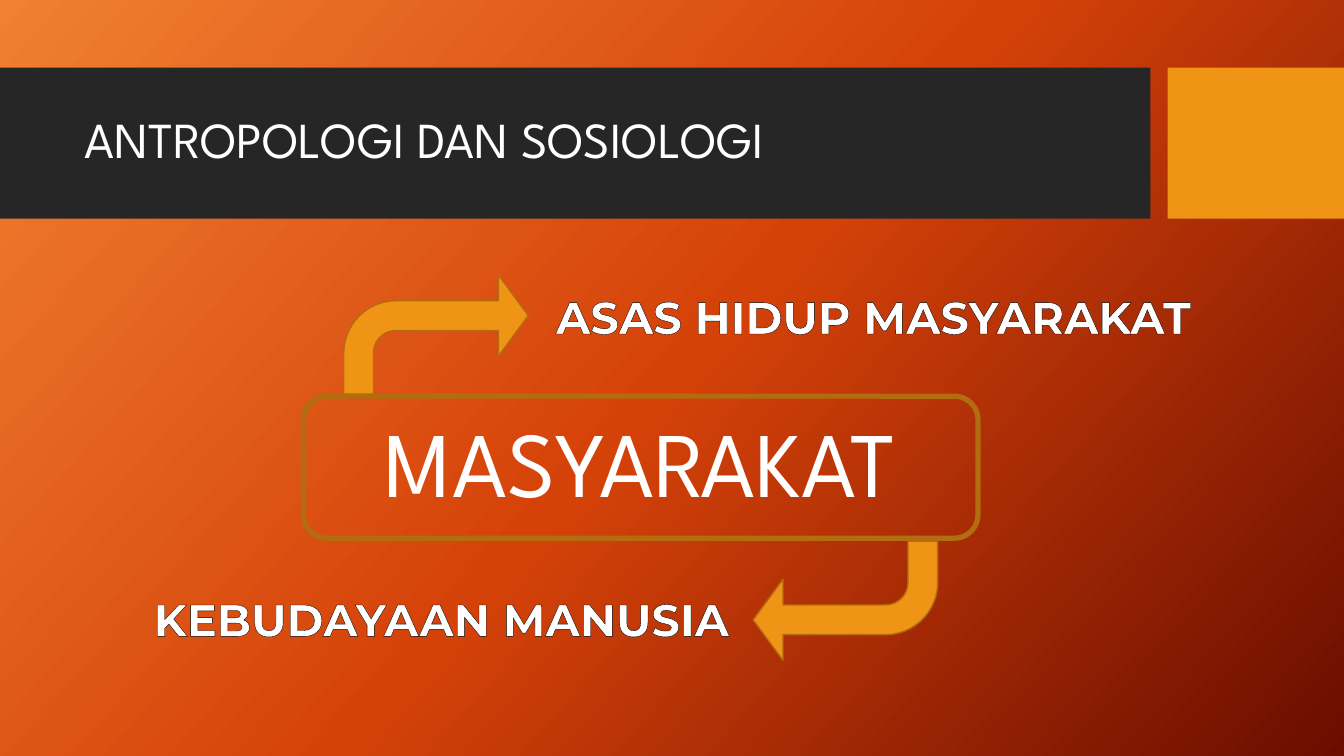
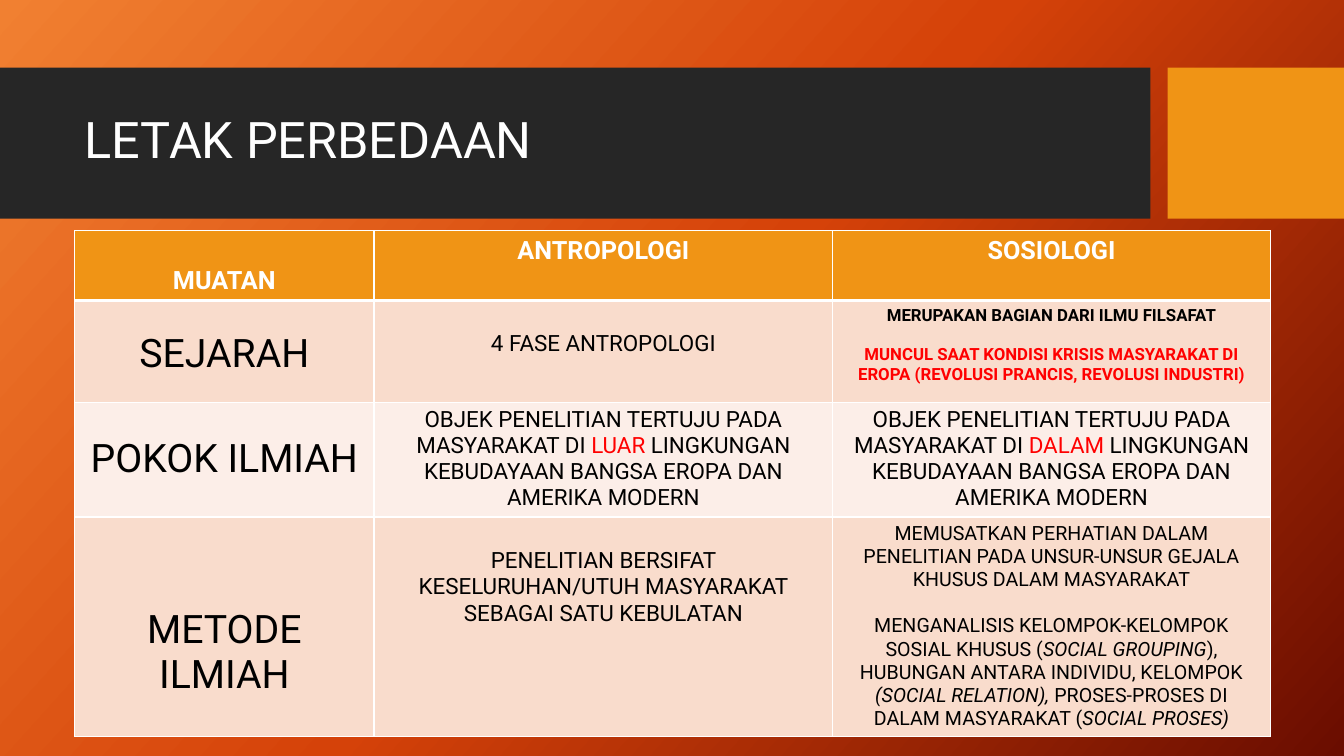
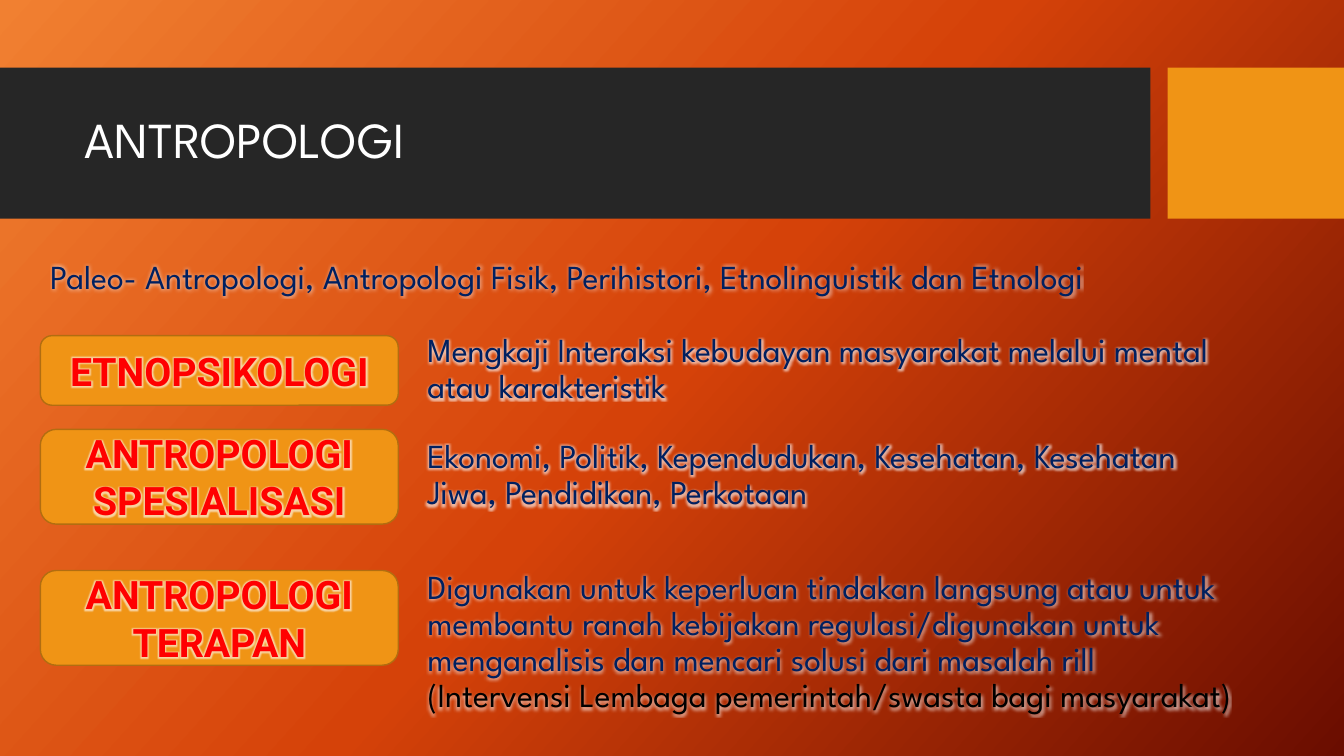
from copy import deepcopy

from lxml import etree
from pptx import Presentation
from pptx.dml.color import RGBColor
from pptx.enum.shapes import MSO_SHAPE
from pptx.enum.text import MSO_ANCHOR, PP_ALIGN
from pptx.oxml.ns import qn
from pptx.util import Inches, Pt

RECT, ROUND, BENT = MSO_SHAPE.RECTANGLE, MSO_SHAPE.ROUNDED_RECTANGLE, MSO_SHAPE.BENT_ARROW
TOP, MID, LOW = MSO_ANCHOR.TOP, MSO_ANCHOR.MIDDLE, MSO_ANCHOR.BOTTOM
LEFT, CENTER = PP_ALIGN.LEFT, PP_ALIGN.CENTER
WIDE, HIGH = 13.33, 7.5
TITLE_ONLY = 5
HUES = {
    "light": "F18031", "warm": "D54209", "deep": "6A0D00",
    "band": "262626", "gold": "F09415", "edge": "B26D10",
    "white": "FFFFFF", "black": "000000", "red": "FF0000", "navy": "002060",
    "odd": "F9DCCC", "even": "FCEEE8",
}
SPARTAN, ROBOTO, MONT = "League Spartan", "Roboto", "Montserrat"


def rgb(hue):
    return RGBColor.from_string(HUES[hue])


def inch(box):
    return [Inches(n) for n in box]


def solid(node, hue, alpha=100):
    """Adds a solid colour fill to an XML node."""
    fill = etree.SubElement(node, qn("a:solidFill"))
    etree.SubElement(fill, qn("a:srgbClr"), val=HUES[hue])
    return node


def halo(run, hue="white"):
    """Puts a soft glow around the letters of a run."""
    fx = etree.Element(qn("a:effectLst"))
    glow = etree.SubElement(fx, qn("a:glow"), rad=str(Pt(5)))
    tint = etree.SubElement(glow, qn("a:srgbClr"), val=HUES[hue])
    etree.SubElement(tint, qn("a:alpha"), val="60000")
    run._r.rPr.find(qn("a:latin")).addprevious(fx)


def write(frame, *paras, font=ROBOTO, size=16, hue="black", bold=False,
          align=CENTER, anchor=MID, lead=None, gap=0, glow=False, rim=False):
    """Each paragraph is a text or a list of texts and (text, changes) pairs."""
    frame.word_wrap = True
    frame.vertical_anchor = anchor
    for i, para in enumerate(paras):
        p = frame.paragraphs[0] if i == 0 else frame.add_paragraph()
        p.alignment = align
        if lead:
            p.line_spacing = lead
        if i:
            p.space_before = Pt(gap)
        for part in [para] if isinstance(para, str) else para:
            text, diff = (part, {}) if isinstance(part, str) else part
            run = p.add_run()
            run.text = text
            run.font.name, run.font.size = font, Pt(size)
            run.font.bold = bold
            run.font.italic = diff.get("italic", False)
            run.font.color.rgb = rgb(diff.get("hue", hue))
            if glow:
                halo(run)
            if rim:
                line = etree.Element(qn("a:ln"), w=str(Pt(0.75)))
                run._r.rPr.insert(0, solid(line, "black"))


def shape(slide, kind, box, fill=None, edge=None, width=1):
    item = slide.shapes.add_shape(kind, *inch(box))
    item.shadow.inherit = False
    if fill:
        item.fill.solid()
        item.fill.fore_color.rgb = rgb(fill)
    else:
        item.fill.background()
    if edge:
        item.line.color.rgb = rgb(edge)
        item.line.width = Pt(width)
    else:
        item.line.fill.background()
    return item


def label(slide, box, *paras, **look):
    write(slide.shapes.add_textbox(*inch(box)).text_frame, *paras, **look)


def backdrop(layout):
    """Gives the layout its diagonal three-colour gradient."""
    fill = layout.background.fill
    fill.gradient()
    fill.gradient_angle = 360 - 42
    stops = layout._element.find(".//" + qn("a:gsLst"))
    stops.insert(1, deepcopy(stops[0]))
    for stop, hue, place in zip(fill.gradient_stops, ("light", "warm", "deep"), (0, 0.5, 1)):
        stop.color.rgb = rgb(hue)
        stop.position = place


def bands(slide):
    """Draws the title bands and hands them to the layout of the slide."""
    tree = slide.slide_layout.shapes._spTree
    for i, (left, width, hue) in enumerate([(0, 11.41, "band"), (11.58, 1.75, "gold")]):
        band = shape(slide, RECT, (left, 0.67, width, 1.5), hue)
        tree.insert(2 + i, band._element)


def page(deck, title, font=SPARTAN):
    slide = deck.slides.add_slide(deck.slide_layouts[TITLE_ONLY])
    head = slide.shapes.title
    head.left, head.top, head.width, head.height = inch((0.74, 0.82, 10.51, 1.18))
    write(head.text_frame, title, font=font, size=36, hue="white", align=LEFT, lead=0.9)
    return slide


def society(slide, box):
    """A framed word with one bent arrow leaving above and one below."""
    left, top, width, height = box
    frame = shape(slide, ROUND, box, edge="edge", width=3.75)
    write(frame.text_frame, "MASYARAKAT", font=SPARTAN, size=66, hue="white", lead=0.9)
    long, tall, inset = 1.83, 1.18, 0.4
    spots = [(left + inset, top - tall - 0.02, 0),
             (left + width - inset - long, top + height + 0.03, 180)]
    for x, y, turn in spots:
        arrow = shape(slide, BENT, (x, y, long, tall), "gold", "edge")
        arrow.rotation = turn
        for i, share in enumerate((0.25, 0.34, 0.25, 0.44)):
            arrow.adjustments[i] = share
    look = {"font": MONT, "size": 32, "hue": "white", "bold": True, "anchor": TOP, "rim": True}
    label(slide, (left + 2.2, top - 1.11, 6.91, 0.64), "ASAS HIDUP MASYARAKAT", **look)
    label(slide, (left - 1.71, top + height + 0.48, 6.16, 0.64), "KEBUDAYAAN MANUSIA", **look)


def border(cell, tops, lows):
    sides = zip(("L", "R", "T", "B"), (1, 1, tops, lows))
    for i, (side, width) in enumerate(sides):
        line = etree.Element(qn("a:ln" + side), w=str(Pt(width)))
        cell._tc.get_or_add_tcPr().insert(i, solid(line, "white"))


def scope(word):
    return ["OBJEK PENELITIAN TERTUJU PADA MASYARAKAT DI ", (word, {"hue": "red"}),
            " LINGKUNGAN KEBUDAYAAN BANGSA EROPA DAN AMERIKA MODERN"]


def contrast(slide, box):
    """The table; each cell holds paragraphs, format and top margin."""
    head = {"size": 18, "hue": "white", "bold": True, "anchor": TOP}
    name, body = {"size": 28}, {"anchor": TOP}
    slant = {"italic": True}
    rows = [
        [(["MUATAN"], {**head, "anchor": LOW}, 0.05),
         (["ANTROPOLOGI"], head, 0.05),
         (["SOSIOLOGI"], head, 0.05)],
        [(["SEJARAH"], name, 0.1),
         (["4 FASE ANTROPOLOGI"], body, 0.3),
         (["MERUPAKAN BAGIAN DARI ILMU FILSAFAT",
           [("MUNCUL SAAT KONDISI KRISIS MASYARAKAT DI EROPA "
             "(REVOLUSI PRANCIS, REVOLUSI INDUSTRI)", {"hue": "red"})]],
          {"size": 12, "bold": True, "anchor": TOP, "gap": 14}, 0.05)],
        [(["POKOK ILMIAH"], name, 0.05),
         ([scope("LUAR")], body, 0.05),
         ([scope("DALAM")], body, 0.05)],
        [(["METODE ILMIAH"], {**name, "anchor": TOP}, 0.89),
         (["PENELITIAN BERSIFAT KESELURUHAN/UTUH MASYARAKAT SEBAGAI SATU KEBULATAN"],
          body, 0.31),
         (["MEMUSATKAN PERHATIAN DALAM PENELITIAN PADA UNSUR-UNSUR GEJALA "
           "KHUSUS DALAM MASYARAKAT",
           ["MENGANALISIS KELOMPOK-KELOMPOK SOSIAL KHUSUS (", ("SOCIAL GROUPING", slant),
            "), HUBUNGAN ANTARA INDIVIDU, KELOMPOK ", ("(SOCIAL RELATION),", slant),
            " PROSES-PROSES DI DALAM MASYARAKAT (", ("SOCIAL PROSES)", slant)]],
          {"size": 14, "anchor": TOP, "gap": 16.4}, 0.05)],
    ]
    grid = slide.shapes.add_table(len(rows), 3, *inch(box)).table
    grid.horz_banding = False
    for col, width in zip(grid.columns, (2.97, 4.55, 4.34)):
        col.width = Inches(width)
    for row, height in zip(grid.rows, (0.69, 1.01, 1.14, 2.18)):
        row.height = Inches(height)
    for r, row in enumerate(rows):
        for c, (paras, look, lift) in enumerate(row):
            cell = grid.cell(r, c)
            cell.fill.solid()
            cell.fill.fore_color.rgb = rgb(("gold", "odd", "even", "odd")[r])
            border(cell, 3 if r == 1 else 1, 3 if r == 0 else 1)
            write(cell.text_frame, *paras, **look)
            cell.vertical_anchor = look.get("anchor", MID)
            cell.margin_top = Inches(lift)


NOTE = {"font": SPARTAN, "size": 24, "hue": "navy", "align": LEFT, "lead": 0.9, "glow": True}


def branch(slide, box, drop, tall, name, note):
    """A tag, set drop below the top of the box, with its note to the right."""
    left, top, width, height = box
    tag = shape(slide, ROUND, (left, top + drop, 3.55, tall), "gold", "edge")
    write(tag.text_frame, name, size=28, hue="red", bold=True, glow=True)
    label(slide, (left + 3.74, top, width - 3.74, height), note, **NOTE)


def fields(slide, left, width):
    label(slide, (left, 2.29, 12.66, 0.94),
          "Paleo- Antropologi, Antropologi Fisik, Perihistori, Etnolinguistik dan Etnologi",
          **NOTE)
    rows = [
        (3.2, 0.94, 0.13, 0.69, "ETNOPSIKOLOGI",
         "Mengkaji Interaksi kebudayan masyarakat melalui mental atau karakteristik"),
        (4.25, 0.94, 0.01, 0.94, "ANTROPOLOGI SPESIALISASI",
         "Ekonomi, Politik, Kependudukan, Kesehatan, Kesehatan Jiwa, Pendidikan, Perkotaan"),
        (5.54, 1.67, 0.12, 0.94, "ANTROPOLOGI TERAPAN",
         ["Digunakan untuk keperluan tindakan langsung atau untuk membantu ranah kebijakan "
          "regulasi/digunakan untuk menganalisis dan mencari solusi dari masalah rill ",
          ("(Intervensi Lembaga pemerintah/swasta bagi masyarakat)", {"hue": "black"})]),
    ]
    for top, height, *rest in rows:
        branch(slide, (left, top, width, height), *rest)


def main():
    deck = Presentation()
    deck.slide_width, deck.slide_height = Inches(WIDE), Inches(HIGH)
    backdrop(deck.slide_layouts[TITLE_ONLY])
    first = page(deck, "ANTROPOLOGI DAN SOSIOLOGI")
    bands(first)
    society(first, (3.01, 3.93, 6.69, 1.41))
    contrast(page(deck, "LETAK PERBEDAAN", ROBOTO), (0.74, 2.29, 11.86, 5.02))
    fields(page(deck, "ANTROPOLOGI"), 0.4, 12.05)
    deck.save("out.pptx")


if __name__ == "__main__":
    main()
